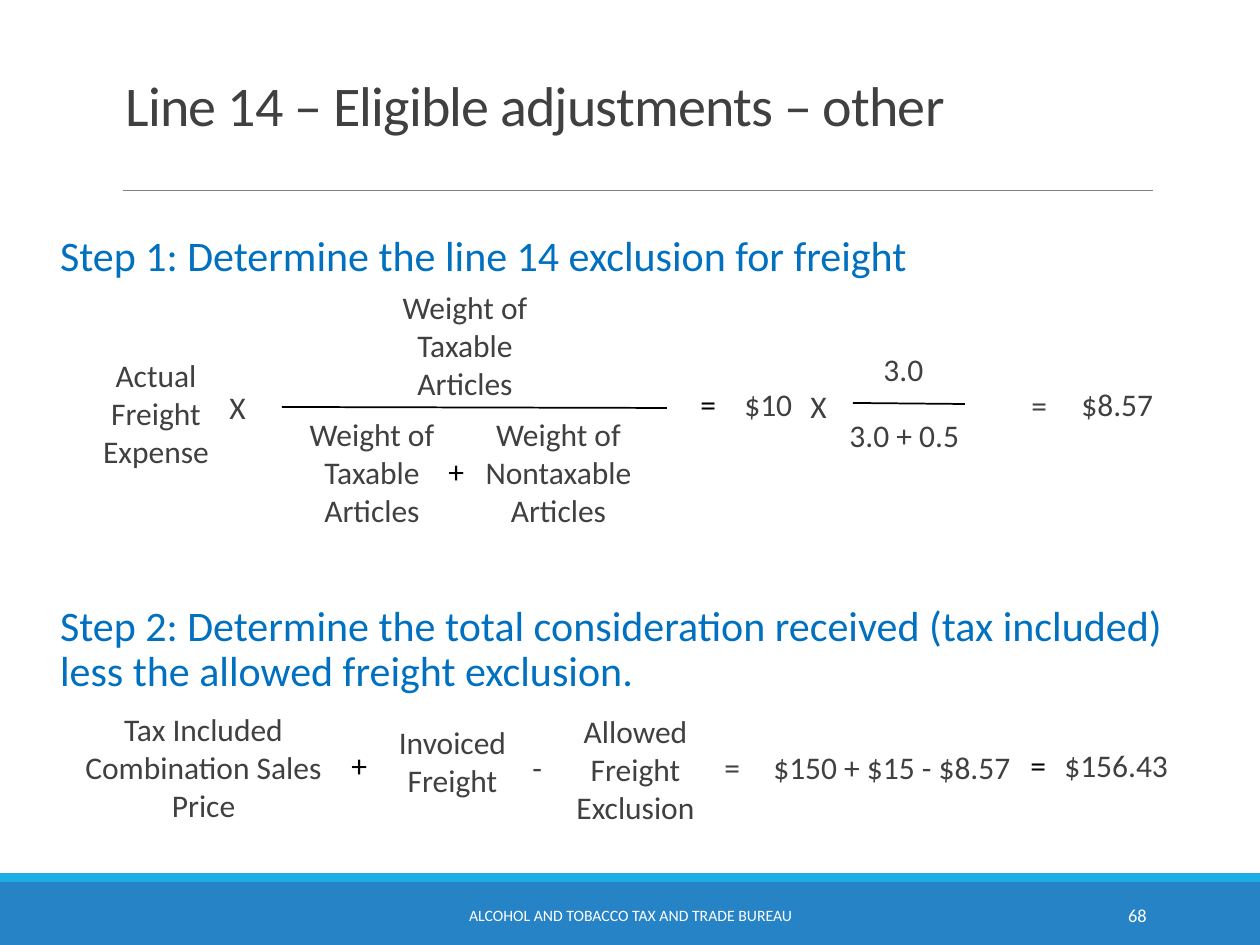
from lxml import etree
from pptx import Presentation
from pptx.dml.color import RGBColor
from pptx.enum.shapes import MSO_CONNECTOR, MSO_SHAPE
from pptx.enum.text import MSO_ANCHOR, MSO_AUTO_SIZE, PP_ALIGN
from pptx.oxml.ns import qn
from pptx.util import Emu, Pt

LEFT, CENTER, RIGHT = PP_ALIGN.LEFT, PP_ALIGN.CENTER, PP_ALIGN.RIGHT
TOP, MIDDLE, BOTTOM = MSO_ANCHOR.TOP, MSO_ANCHOR.MIDDLE, MSO_ANCHOR.BOTTOM
STRAIGHT = MSO_CONNECTOR.STRAIGHT
RECTANGLE = MSO_SHAPE.RECTANGLE
NO_FIT = MSO_AUTO_SIZE.NONE

WHITE = RGBColor(0xFF, 0xFF, 0xFF)
BLACK = RGBColor(0, 0, 0)
DARK = RGBColor(0x40, 0x40, 0x40)
GRAY = RGBColor(0x80, 0x80, 0x80)
STEP_BLUE = RGBColor(0x00, 0x70, 0xC0)
FOOTER_BLUE = RGBColor(0x26, 0x83, 0xC6)
STRIPE_BLUE = RGBColor(0x1C, 0xAD, 0xE4)

FONT = "Calibri"
PX_PER_INCH = 126
SLIDE_W, SLIDE_H = 1260, 945
SYMBOL_SIZE = 52

# Formula terms: text, left, top, width, height
TERMS = [
    ("Actual Freight Expense", 84, 350, 144, 127),
    ("Weight of Taxable Articles", 355, 282, 220, 127),
    ("Weight of Taxable Articles", 276, 409, 192, 127),
    ("Weight of Nontaxable Articles", 450, 409, 217, 127),
    ("Tax Included Combination Sales Price", 38, 704, 331, 127),
    ("Invoiced Freight", 384, 717, 137, 89),
    ("Allowed Freight Exclusion", 560, 706, 151, 127),
]

# Figures: text, left, top, width
FIGURES = [
    ("$10", 732, 379, 86),
    ("3.0", 871, 344, 95),
    ("3.0 + 0.5", 837, 410, 181),
    ("$8.57", 1069, 379, 120),
    ("$150 + $15 - $8.57", 761, 742, 275),
    ("$156.43", 1052, 740, 163),
]

# Operators: text, left, top, colour
OPERATORS = [
    ("X", 217, 382, DARK),
    ("+", 436, 446, BLACK),
    ("=", 688, 379, BLACK),
    ("X", 798, 381, DARK),
    ("=", 1019, 380, DARK),
    ("+", 339, 740, BLACK),
    ("-", 520, 742, DARK),
    ("=", 712, 742, DARK),
    ("=", 1018, 740, BLACK),
]


def px(length):
    return Emu(round(length * 914400 / PX_PER_INCH))


def format_text(frame, text, size=18, color=DARK, align=LEFT, anchor=TOP,
                line_spacing=None, side_inset=None, tracking=None):
    frame.word_wrap = True
    frame.auto_size = NO_FIT
    frame.vertical_anchor = anchor
    if side_inset is not None:
        frame.margin_left = frame.margin_right = px(side_inset)
    paragraph = frame.paragraphs[0]
    paragraph.alignment = align
    if line_spacing:
        paragraph.line_spacing = line_spacing
    run = paragraph.add_run()
    run.text = text
    run.font.name = FONT
    run.font.size = Pt(size)
    run.font.color.rgb = color
    if tracking is not None:
        run.font._element.set("spc", str(tracking))


def add_text(slide, text, left, top, width, height, **style):
    box = slide.shapes.add_textbox(px(left), px(top), px(width), px(height))
    format_text(box.text_frame, text, **style)


def add_title(slide, text, left, top, width, height):
    title = slide.shapes.title
    title.left, title.top = px(left), px(top)
    title.width, title.height = px(width), px(height)
    format_text(title.text_frame, text, size=32, anchor=BOTTOM,
                line_spacing=0.85, tracking=-50)


def add_band(slide, top, height, color):
    band = slide.shapes.add_shape(RECTANGLE, 0, px(top), px(SLIDE_W), px(height))
    band.shadow.inherit = False
    band.fill.solid()
    band.fill.fore_color.rgb = color
    band.line.fill.background()


def add_rule(slide, x1, y1, x2, y2, color=BLACK, weight=1):
    rule = slide.shapes.add_connector(STRAIGHT, px(x1), px(y1), px(x2), px(y2))
    rule.line.color.rgb = color
    rule.line.width = Pt(weight)
    etree.SubElement(rule._element.spPr, qn("a:effectLst"))


def add_step(slide, text, top, height):
    add_text(slide, text, 60, top, 1153, height, size=24, color=STEP_BLUE,
             line_spacing=0.9, side_inset=0)


def add_footer(slide):
    add_band(slide, 882, 63, FOOTER_BLUE)
    add_band(slide, 873, 9, STRIPE_BLUE)
    add_text(slide, "ALCOHOL AND TOBACCO TAX AND TRADE BUREAU", 381, 890, 499, 50,
             size=9, color=WHITE, align=CENTER, anchor=MIDDLE)
    add_text(slide, "68", 1023, 890, 136, 50,
             size=10.5, color=WHITE, align=RIGHT, anchor=MIDDLE)


def main():
    deck = Presentation()
    deck.slide_width, deck.slide_height = px(SLIDE_W), px(SLIDE_H)
    slide = deck.slides.add_slide(deck.slide_layouts[5])

    # Frame of the slide
    add_footer(slide)
    add_title(slide, "Line 14 – Eligible adjustments – other", 113, 44, 1040, 100)
    add_rule(slide, 123, 190, 1153, 190, color=GRAY, weight=0.5)

    # Step headings
    add_step(slide, "Step 1: Determine the line 14 exclusion for freight", 229, 59)
    add_step(slide, "Step 2: Determine the total consideration received (tax included) "
             "less the allowed freight exclusion.", 599, 104)

    # Formulas
    for text, left, top, width, height in TERMS:
        add_text(slide, text, left, top, width, height, align=CENTER)
    for text, left, top, width in FIGURES:
        add_text(slide, text, left, top, width, 50)
    for text, left, top, color in OPERATORS:
        add_text(slide, text, left, top, SYMBOL_SIZE, SYMBOL_SIZE, color=color)

    # Fraction bars
    add_rule(slide, 282, 407, 667, 408)
    add_rule(slide, 853, 403, 965, 404)

    deck.save("out.pptx")


if __name__ == "__main__":
    main()
